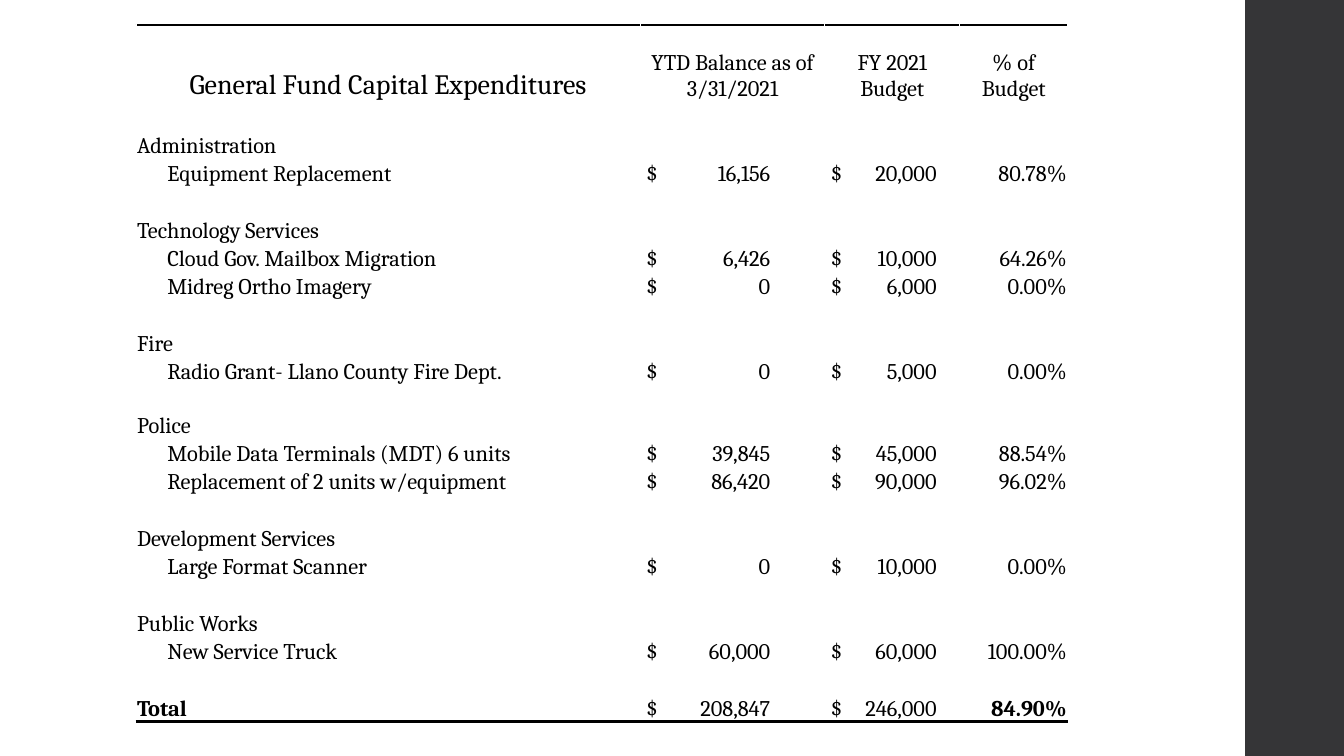
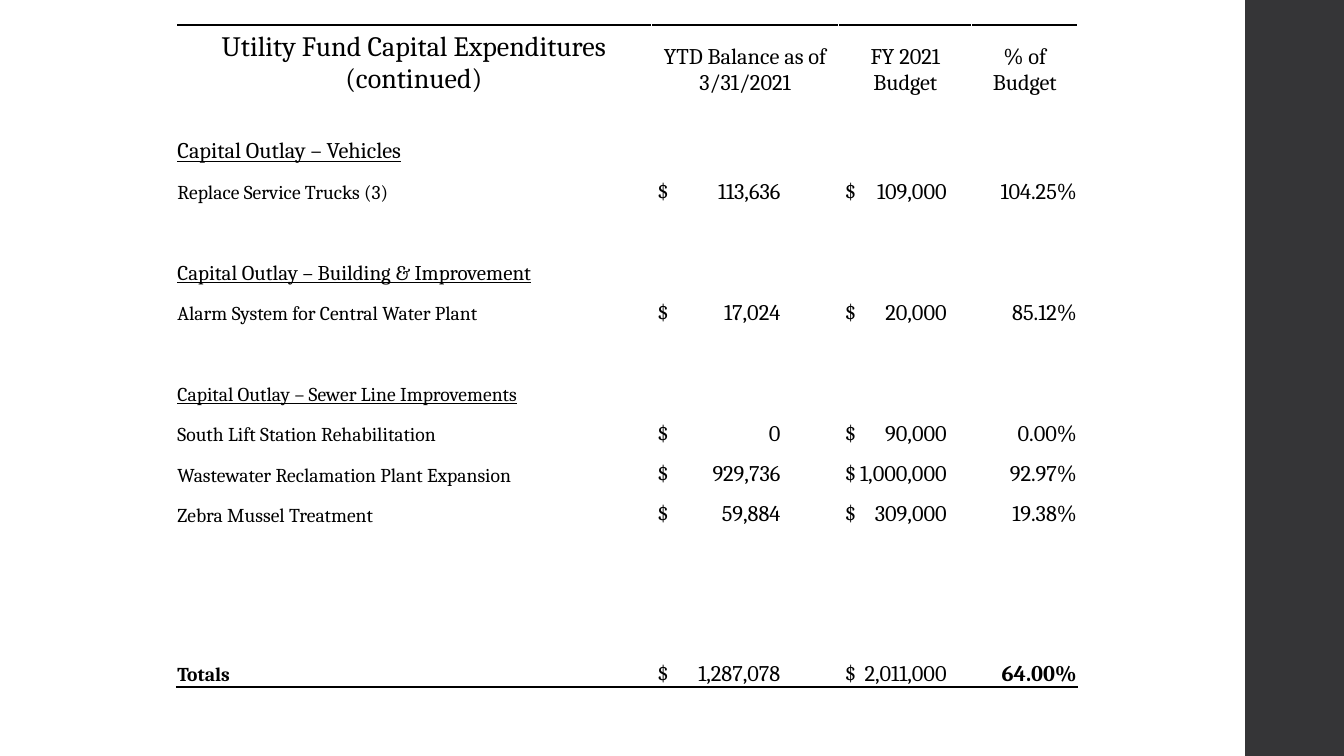
import dataclasses
import lxml.etree
import pptx
import pptx.dml.color
import pptx.enum.shapes
import pptx.enum.text
import pptx.oxml.ns
import pptx.util

Inches = pptx.util.Inches
Pt = pptx.util.Pt
Align = pptx.enum.text.PP_ALIGN
qn = pptx.oxml.ns.qn


@dataclasses.dataclass(frozen=True)
class Theme:
    font: str = "Cambria"
    ink: str = "000000"
    paper: str = "FFFFFF"
    band: str = "353537"
    title: int = 20
    body: int = 16
    mid: int = 15
    small: int = 14
    rule: int = 2
    pad: float = 0.01
    inset: float = 0.06


THEME = Theme()


@dataclasses.dataclass
class Row:
    cells: tuple = ("", "", "", "")
    high: float = 0.4
    size: int = THEME.body
    indent: float = 0
    line: bool = False
    total: bool = False


@dataclasses.dataclass
class Sheet:
    title: str
    box: tuple
    cols: tuple
    tabs: tuple
    head: float
    rows: list


def color(code):
    return pptx.dml.color.RGBColor.from_string(code)


def add_band(slide, layout):
    band = slide.shapes.add_shape(
        pptx.enum.shapes.MSO_SHAPE.RECTANGLE,
        Inches(12.35), 0, Inches(0.98), Inches(7.5))
    band.shadow.inherit = False
    band.fill.solid()
    band.fill.fore_color.rgb = color(THEME.band)
    band.line.fill.background()
    layout.shapes._spTree.append(band._element)


def add_rule(cell, side):
    line = lxml.etree.Element(qn("a:" + side), w=str(Pt(THEME.rule)))
    fill = lxml.etree.SubElement(line, qn("a:solidFill"))
    lxml.etree.SubElement(fill, qn("a:srgbClr"), val=THEME.ink)
    cell._tc.get_or_add_tcPr().insert(0, line)


def add_tab(para, place):
    tabs = lxml.etree.SubElement(para._p.get_or_add_pPr(), qn("a:tabLst"))
    lxml.etree.SubElement(
        tabs, qn("a:tab"), pos=str(Inches(place)), algn="r")


def fill_cell(cell, text, size, align=Align.LEFT, left=THEME.pad,
              bold=False, line=False):
    cell.fill.solid()
    cell.fill.fore_color.rgb = color(THEME.paper)
    cell.vertical_anchor = pptx.enum.text.MSO_ANCHOR.BOTTOM
    cell.margin_left = Inches(left)
    cell.margin_right = cell.margin_top = Inches(THEME.pad)
    cell.margin_bottom = 0
    para = cell.text_frame.paragraphs[0]
    if not text:
        lxml.etree.SubElement(
            para._p, qn("a:endParaRPr"), sz=str(size * 100))
        return
    para.text = text
    para.alignment = align
    for run in para.runs:
        run.font.name = THEME.font
        run.font.size = Pt(size)
        run.font.color.rgb = color(THEME.ink)
        run.font.bold = bold
        run.font.underline = line


def fill_head(grid, title):
    names = (title, "YTD Balance as of 3/31/2021",
             "FY 2021 Budget", "% of Budget")
    for col, name in enumerate(names):
        cell = grid.cell(0, col)
        size = THEME.body if col else THEME.title
        fill_cell(cell, name, size, Align.CENTER)
        add_rule(cell, "lnT")


def fill_row(grid, spot, row, tabs):
    name, spent, plan, share = row.cells
    cells = [grid.cell(spot, col) for col in range(4)]
    fill_cell(cells[0], name, row.size, left=THEME.pad + row.indent,
              bold=row.total, line=row.line)
    for cell, sum_, tab in zip(cells[1:3], (spent, plan), tabs):
        fill_cell(cell, sum_ and "$\t" + sum_, THEME.body, left=THEME.inset)
        if sum_:
            add_tab(cell.text_frame.paragraphs[0], tab)
    fill_cell(cells[3], share, THEME.body, Align.RIGHT, bold=row.total)
    if row.total:
        for cell in cells:
            add_rule(cell, "lnB")


def add_sheet(slide, sheet):
    highs = [sheet.head] + [row.high for row in sheet.rows]
    left, top = sheet.box
    frame = slide.shapes.add_table(
        len(highs), len(sheet.cols), Inches(left), Inches(top),
        Inches(sum(sheet.cols)), Inches(sum(highs)))
    grid = frame.table
    grid.first_row = grid.horz_banding = False
    for col, wide in zip(grid.columns, sheet.cols):
        col.width = Inches(wide)
    for line, high in zip(grid.rows, highs):
        line.height = Inches(high)
    fill_head(grid, sheet.title)
    for spot, row in enumerate(sheet.rows, 1):
        fill_row(grid, spot, row, sheet.tabs)


def gap(high=0.4):
    return Row(high=high)


def group(name, high=0.28):
    return Row((name, "", "", ""), high)


def item(*cells):
    return Row(cells, 0.28, indent=0.3)


def outlay(name, size):
    return Row(("Capital Outlay – " + name, "", "", ""), size=size, line=True)


def work(*cells):
    return Row(cells, size=THEME.small)


GENERAL = Sheet(
    "General Fund Capital Expenditures",
    (1.35, 0.25), (5, 1.83, 1.34, 1.07), (1.23, 1.05), 0.76,
    [
        gap(0.27),
        group("Administration"),
        item("Equipment Replacement", "16,156", "20,000", "80.78%"),
        gap(0.27),
        group("Technology Services"),
        item("Cloud Gov. Mailbox Migration", "6,426", "10,000", "64.26%"),
        item("Midreg Ortho Imagery", "0", "6,000", "0.00%"),
        gap(0.27),
        group("Fire"),
        item("Radio Grant- Llano County Fire Dept.", "0", "5,000", "0.00%"),
        group("Police", 0.53),
        item("Mobile Data Terminals (MDT) 6 units",
             "39,845", "45,000", "88.54%"),
        item("Replacement of 2 units w/equipment",
             "86,420", "90,000", "96.02%"),
        gap(0.27),
        group("Development Services"),
        item("Large Format Scanner", "0", "10,000", "0.00%"),
        gap(0.27),
        group("Public Works"),
        item("New Service Truck", "60,000", "60,000", "100.00%"),
        gap(0.27),
        Row(("Total", "208,847", "246,000", "84.90%"), 0.28, total=True),
    ])

UTILITY = Sheet(
    "Utility Fund Capital Expenditures (continued)",
    (1.75, 0.25), (4.71, 1.86, 1.32, 1.05), (1.22, 1.01), 0.7,
    [
        gap(0.27),
        outlay("Vehicles", THEME.body),
        work("Replace Service Trucks (3)", "113,636", "109,000", "104.25%"),
        gap(),
        outlay("Building & Improvement", THEME.mid),
        work("Alarm System for Central Water Plant",
             "17,024", "20,000", "85.12%"),
        gap(),
        outlay("Sewer Line Improvements", THEME.small),
        work("South Lift Station Rehabilitation", "0", "90,000", "0.00%"),
        work("Wastewater Reclamation Plant Expansion",
             "929,736", "1,000,000", "92.97%"),
        work("Zebra Mussel Treatment", "59,884", "309,000", "19.38%"),
        gap(),
        gap(0.27),
        gap(),
        Row(("Totals", "1,287,078", "2,011,000", "64.00%"), 0.5,
            THEME.small, total=True),
    ])


def main():
    deck = pptx.Presentation()
    deck.slide_width = Inches(13.33)
    deck.slide_height = Inches(7.5)
    layout = deck.slide_layouts[6]
    slides = [deck.slides.add_slide(layout) for _ in range(2)]
    add_band(slides[0], layout)
    for slide, sheet in zip(slides, (GENERAL, UTILITY)):
        add_sheet(slide, sheet)
    deck.save("out.pptx")


if __name__ == "__main__":
    main()
